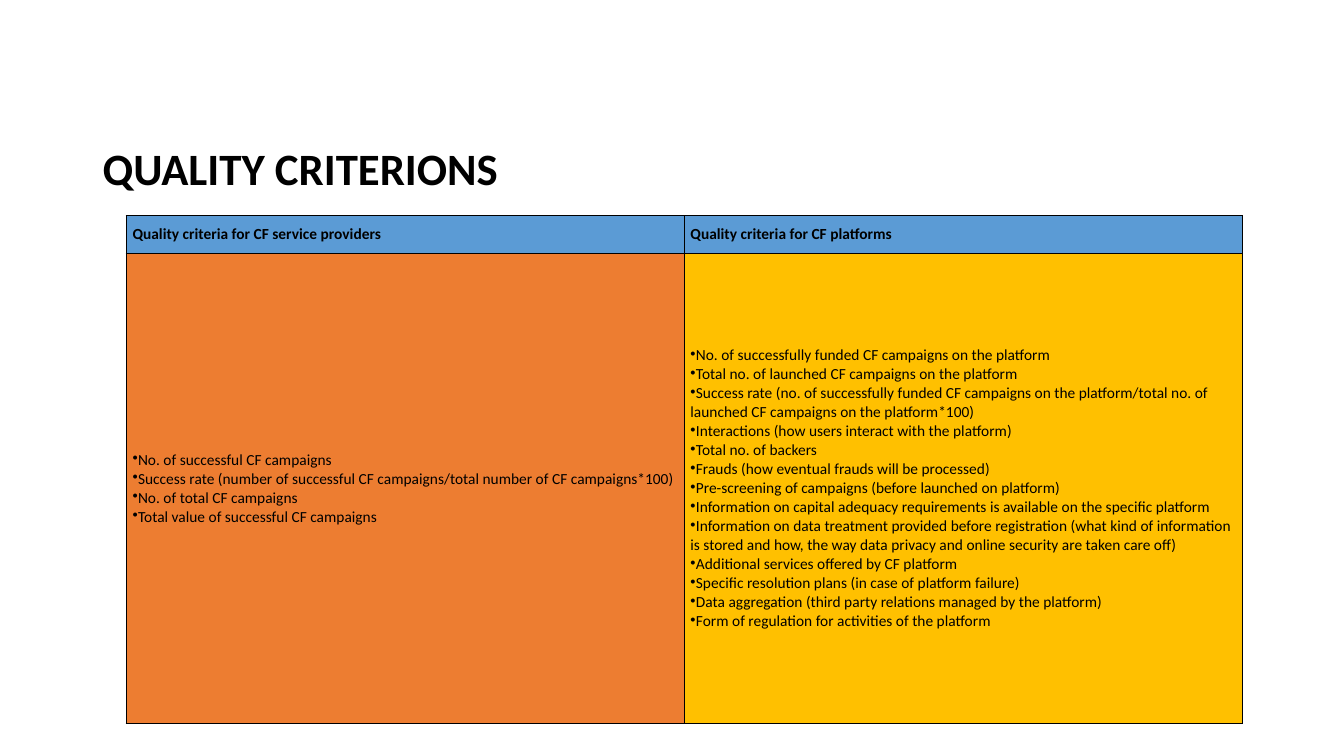
from dataclasses import dataclass

from lxml import etree
from pptx import Presentation
from pptx.dml.color import RGBColor
from pptx.enum.text import MSO_ANCHOR, MSO_AUTO_SIZE, PP_ALIGN
from pptx.oxml.ns import qn
from pptx.table import _Cell
from pptx.text.text import _Paragraph
from pptx.util import Cm, Pt

MIDDLE = MSO_ANCHOR.MIDDLE
LEFT = PP_ALIGN.LEFT
NO_FIT = MSO_AUTO_SIZE.NONE


@dataclass(frozen=True)
class Theme:
    font: str = "Calibri"
    ink: str = "000000"
    head: str = "5B9BD5"
    title_size: int = 32
    cell_size: int = 11
    border: float = 0.75


@dataclass(frozen=True)
class Column:
    head: str
    fill: str
    items: tuple[str, ...]


THEME = Theme()
COLUMNS = (
    Column("Quality criteria for CF service providers", "ED7D31", (
        "No. of successful CF campaigns",
        "Success rate (number of successful CF campaigns/total number of CF campaigns*100)",
        "No. of total CF campaigns",
        "Total value of successful CF campaigns",
    )),
    Column("Quality criteria for CF platforms", "FFC000", (
        "No. of successfully funded CF campaigns on the platform",
        "Total no. of launched CF campaigns on the platform",
        "Success rate (no. of successfully funded CF campaigns on the platform/total no. of "
        "launched CF campaigns on the platform*100)",
        "Interactions (how users interact with the platform)",
        "Total no. of backers",
        "Frauds (how eventual frauds will be processed)",
        "Pre-screening of campaigns (before launched on platform)",
        "Information on capital adequacy requirements is available on the specific platform",
        "Information on data treatment provided before registration (what kind of information "
        "is stored and how, the way data privacy and online security are taken care off)",
        "Additional services offered by CF platform",
        "Specific resolution plans (in case of platform failure)",
        "Data aggregation (third party relations managed by the platform)",
        "Form of regulation for activities of the platform",
    )),
)


def add_run(para: _Paragraph, text: str, size: int, bold: bool) -> None:
    run = para.add_run()
    run.text = text
    run.font.name = THEME.font
    run.font.size = Pt(size)
    run.font.bold = bold
    run.font.color.rgb = RGBColor.from_string(THEME.ink)


def add_bullet(para: _Paragraph) -> None:
    props = para._p.get_or_add_pPr()
    props.set("marL", "0")
    props.set("indent", "0")
    etree.SubElement(props, qn("a:buChar")).set("char", "•")


def add_borders(cell: _Cell) -> None:
    props = cell._tc.get_or_add_tcPr()
    for side in ("lnL", "lnR", "lnT", "lnB"):
        line = etree.SubElement(props, qn(f"a:{side}"))
        line.set("w", str(Pt(THEME.border)))
        fill = etree.SubElement(line, qn("a:solidFill"))
        etree.SubElement(fill, qn("a:srgbClr")).set("val", THEME.ink)


def fill_cell(cell: _Cell, lines: tuple[str, ...], color: str, is_head: bool) -> None:
    add_borders(cell)
    cell.fill.solid()
    cell.fill.fore_color.rgb = RGBColor.from_string(color)
    cell.vertical_anchor = MIDDLE
    cell.margin_left = cell.margin_right = Cm(0.16)
    cell.margin_top = cell.margin_bottom = Cm(0.16)
    frame = cell.text_frame
    for index, line in enumerate(lines):
        para = frame.add_paragraph() if index else frame.paragraphs[0]
        if not is_head:
            add_bullet(para)
        add_run(para, line, THEME.cell_size, is_head)


def add_title(slide, text: str) -> None:
    title = slide.shapes.title
    title.left, title.top = Cm(2.33), Cm(3.22)
    title.width, title.height = Cm(29.21), Cm(2.16)
    frame = title.text_frame
    frame.auto_size = NO_FIT
    frame.vertical_anchor = MIDDLE
    para = frame.paragraphs[0]
    para.alignment = LEFT
    para.line_spacing = 0.9
    add_run(para, text, THEME.title_size, True)


def add_criteria(slide) -> None:
    heights = Cm(0.94), Cm(11.86)
    table = slide.shapes.add_table(
        len(heights), len(COLUMNS), Cm(3.18), Cm(5.44), Cm(28.12), sum(heights)
    ).table
    for row, height in zip(table.rows, heights):
        row.height = height
    for index, column in enumerate(COLUMNS):
        fill_cell(table.cell(0, index), (column.head,), THEME.head, True)
        fill_cell(table.cell(1, index), column.items, column.fill, False)


def main() -> None:
    deck = Presentation()
    deck.slide_width, deck.slide_height = Cm(33.87), Cm(19.05)
    slide = deck.slides.add_slide(deck.slide_layouts.get_by_name("Title Only"))
    add_title(slide, "QUALITY CRITERIONS")
    add_criteria(slide)
    deck.save("out.pptx")


if __name__ == "__main__":
    main()
